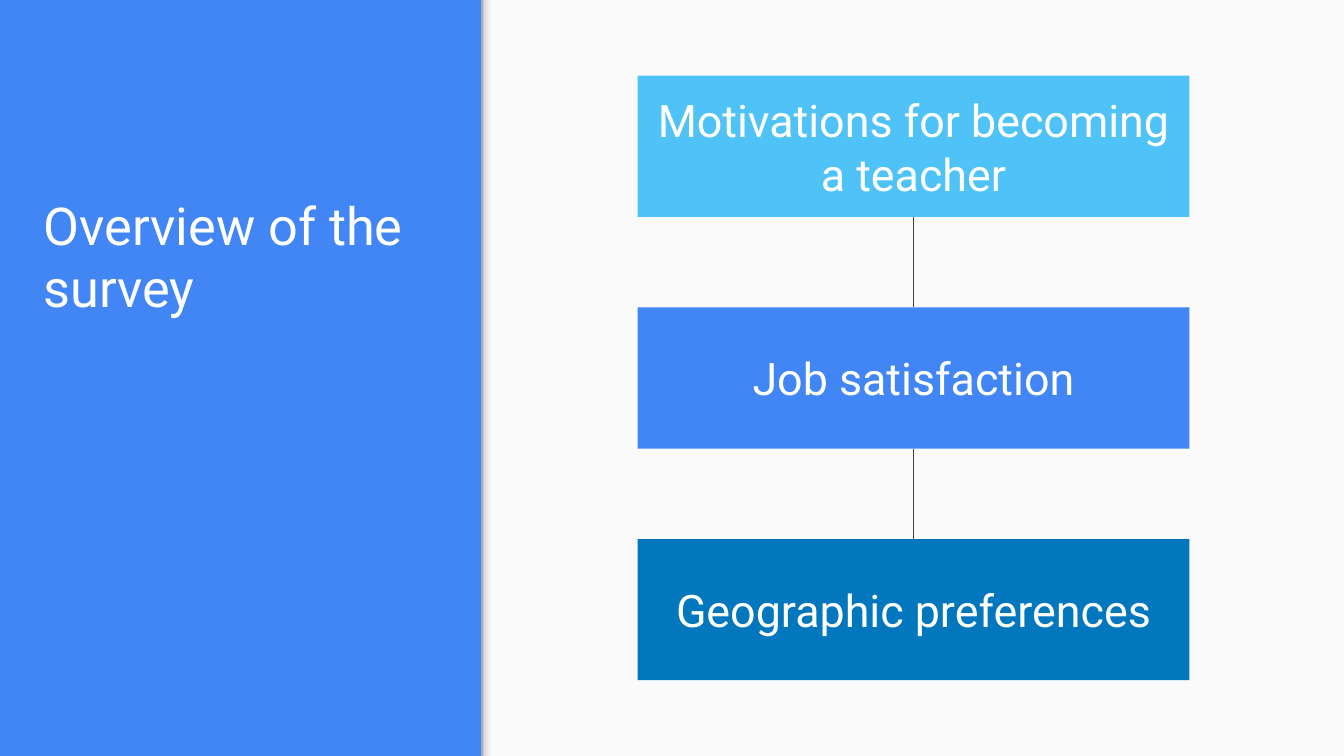
import copy

import pptx
import pptx.dml.color
import pptx.enum.shapes
import pptx.enum.text
import pptx.oxml.ns
import pptx.oxml.xmlchemy
import pptx.util

Cm = pptx.util.Cm
Pt = pptx.util.Pt
Anchor = pptx.enum.text.MSO_ANCHOR
Align = pptx.enum.text.PP_ALIGN

COLORS = {
    "blue": "4285F4",
    "sky": "4FC3F7",
    "deep": "0277BD",
    "paper": "FAFAFA",
    "line": "424242",
    "white": "FFFFFF",
}
EDGE_STOPS = [(0, "999999"), (0.2, "DEDEDE"), (0.64, "F9F9F9"), (1, "F9F9F9")]
WIDTH, HEIGHT = 25.4, 14.29
PANEL_LEFT = 9.1
BOX_LEFT, BOX_TOP, BOX_WIDTH, BOX_HEIGHT = 12.05, 1.43, 10.43, 2.67
BOX_PITCH = 4.38
TOPICS = [
    ("Motivations for becoming a teacher", "sky"),
    ("Job satisfaction", "blue"),
    ("Geographic preferences", "deep"),
]


def rgb(value):
    return pptx.dml.color.RGBColor.from_string(value)


class SurveySlide:
    """Holds the text style and the current slide, and draws its elements."""

    def __init__(self, slide):
        self.slide = slide
        self.font = {"name": "Roboto"}
        inset = Cm(0.25)
        self.frame = {"word_wrap": True, "margin_left": inset, "margin_right": inset,
                      "margin_top": inset, "margin_bottom": inset}

    def apply(self, target, values):
        for name, value in values.items():
            setattr(target, name, value)

    def background(self, color):
        fill = self.slide.background.fill
        fill.solid()
        fill.fore_color.rgb = rgb(COLORS[color])

    def label(self, shape, text, size, anchor, alignment):
        frame = shape.text_frame
        self.apply(frame, {**self.frame, "vertical_anchor": anchor})
        paragraph = frame.paragraphs[0]
        paragraph.alignment = alignment
        run = paragraph.add_run()
        run.text = text
        self.apply(run.font, {**self.font, "size": Pt(size)})
        run.font.color.rgb = rgb(COLORS["white"])

    def title(self, text, left, top, width, height):
        shape = self.slide.shapes.add_textbox(Cm(left), Cm(top), Cm(width), Cm(height))
        self.label(shape, text, 28, Anchor.BOTTOM, Align.LEFT)

    def rectangle(self, left, top, width, height, color):
        shape = self.slide.shapes.add_shape(
            pptx.enum.shapes.MSO_SHAPE.RECTANGLE, Cm(left), Cm(top), Cm(width), Cm(height))
        shape.shadow.inherit = False
        shape.line.fill.background()
        shape.fill.solid()
        shape.fill.fore_color.rgb = rgb(COLORS[color])
        return shape

    def edge(self, left, top, width, height):
        shape = self.rectangle(left, top, width, height, "paper")
        shape.fill.gradient()
        shape.fill.gradient_angle = 0
        stop_list = next(shape.element.iter(pptx.oxml.ns.qn("a:gsLst")))
        for _ in range(len(EDGE_STOPS) - len(stop_list)):
            stop_list.append(copy.deepcopy(stop_list[0]))
        for stop, (position, color) in zip(shape.fill.gradient_stops, EDGE_STOPS):
            stop.position = position
            stop.color.rgb = rgb(color)

    def box(self, text, top, color):
        shape = self.rectangle(BOX_LEFT, top, BOX_WIDTH, BOX_HEIGHT, color)
        self.label(shape, text, 24, Anchor.MIDDLE, Align.CENTER)
        return shape

    def link(self, upper, lower):
        connector = self.slide.shapes.add_connector(
            pptx.enum.shapes.MSO_CONNECTOR.STRAIGHT, 0, 0, 0, 0)
        connector.begin_connect(upper, 2)
        connector.end_connect(lower, 0)
        connector.line.width = Pt(0.75)
        connector.line.color.rgb = rgb(COLORS["line"])
        connector.element.spPr.append(pptx.oxml.xmlchemy.OxmlElement("a:effectLst"))


def main():
    presentation = pptx.Presentation()
    presentation.slide_width = Cm(WIDTH)
    presentation.slide_height = Cm(HEIGHT)
    survey = SurveySlide(presentation.slides.add_slide(presentation.slide_layouts[6]))
    survey.background("blue")
    survey.rectangle(PANEL_LEFT, 0, WIDTH - PANEL_LEFT, HEIGHT, "paper")
    survey.edge(PANEL_LEFT, 0, 0.3, HEIGHT)
    survey.title("Overview of the survey", 0.58, 3.63, 7.8, 2.64)
    boxes = [survey.box(text, BOX_TOP + index * BOX_PITCH, color)
             for index, (text, color) in enumerate(TOPICS)]
    for upper, lower in zip(boxes, boxes[1:]):
        survey.link(upper, lower)
    presentation.save("out.pptx")


if __name__ == "__main__":
    main()
